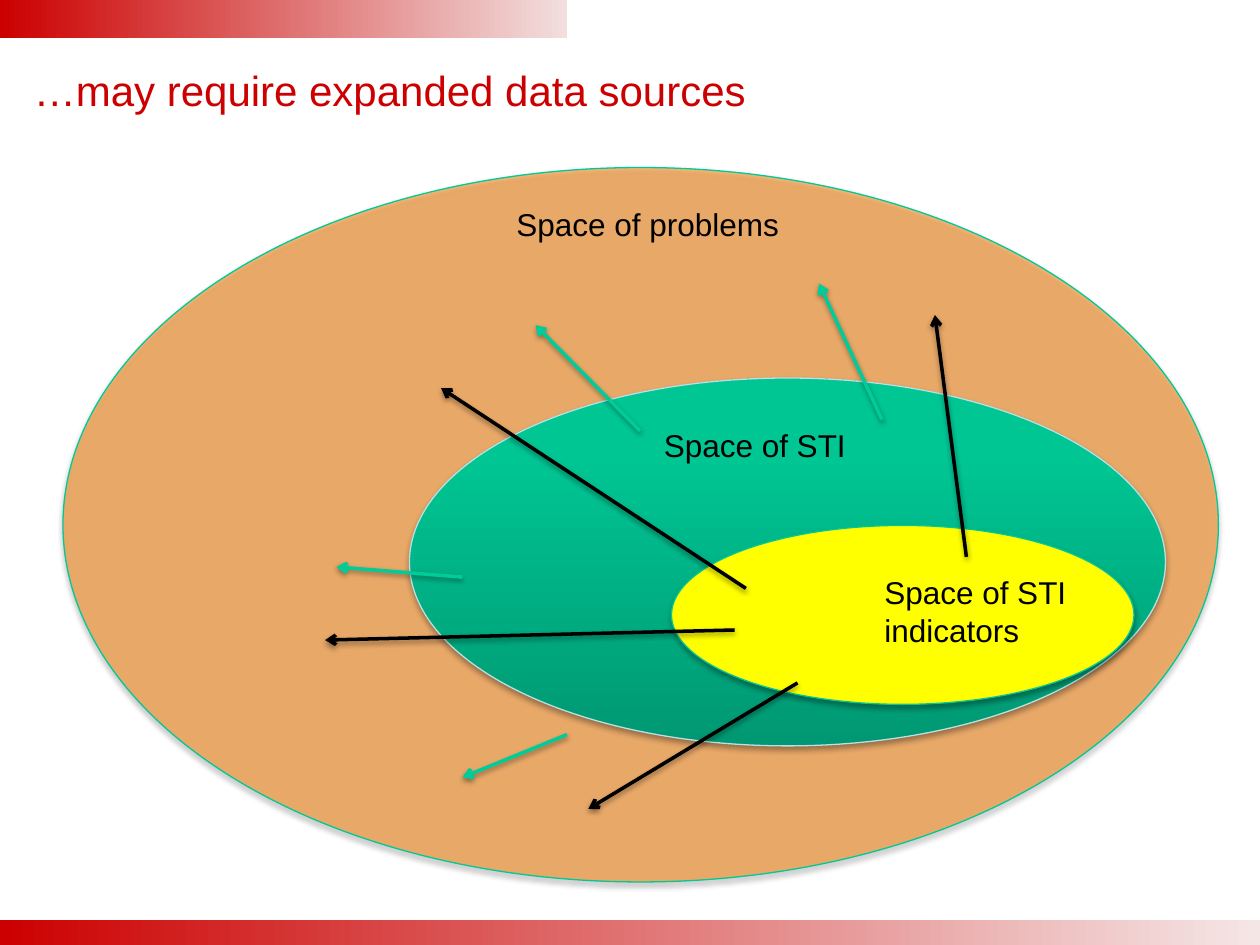
import dataclasses

import lxml.etree
import pptx
import pptx.dml.color
import pptx.enum.shapes
import pptx.enum.text
import pptx.oxml.ns
import pptx.util

Inches = pptx.util.Inches
Pt = pptx.util.Pt
qn = pptx.oxml.ns.qn
SHAPES = pptx.enum.shapes.MSO_SHAPE


@dataclasses.dataclass(frozen=True)
class Theme:
    font: str = "Arial"
    title_size: int = 24
    label_size: int = 18
    red: str = "CC0000"
    footer_fade: str = "F5E6E6"
    header_fade: str = "F2DEDE"
    orange: str = "FF8000"
    yellow: str = "FFFF00"
    black: str = "000000"
    outline: str = "00C896"
    pale_outline: str = "BBE0E3"
    arrow_green: str = "00CC99"
    sti_stops: tuple = ((0, "009872"), (80, "00C694"), (100, "00C795"))
    outline_width: float = 0.75
    arrow_width: float = 2


THEME = Theme()


def rgb(color):
    return pptx.dml.color.RGBColor.from_string(color)


def add_element(parent, tag, **attributes):
    values = {name: str(value) for name, value in attributes.items()}
    return lxml.etree.SubElement(parent, qn(tag), values)


def add_color(parent, color, opacity=None):
    node = add_element(parent, "a:srgbClr", val=color)
    if opacity is not None:
        add_element(node, "a:alpha", val=opacity * 1000)


def fill_gradient(shape, stops, angle):
    shape.fill.gradient()
    shape.fill.gradient_angle = angle
    stop_list = shape.element.spPr.find(".//" + qn("a:gsLst"))
    for old_stop in list(stop_list):
        stop_list.remove(old_stop)
    for position, color in stops:
        add_color(add_element(stop_list, "a:gs", pos=position * 1000), color)


def cast_shadow(shape, opacity, distance):
    effects = add_element(shape.element.spPr, "a:effectLst")
    shadow = add_element(effects, "a:outerShdw", blurRad=Pt(3.1),
                         dist=Pt(distance), dir=90 * 60000, rotWithShape=0)
    add_color(shadow, THEME.black, opacity)


def add_band(slide, box, fade):
    band = slide.shapes.add_shape(SHAPES.RECTANGLE, *map(Inches, box))
    fill_gradient(band, ((0, THEME.red), (100, fade)), 0)
    band.line.fill.background()
    band.shadow.inherit = False


def add_space(slide, box, outline, fill=None, opacity=None, stops=None):
    space = slide.shapes.add_shape(SHAPES.OVAL, *map(Inches, box))
    if stops:
        fill_gradient(space, stops, 90)
    else:
        space.fill.solid()
        space.fill.fore_color.rgb = rgb(fill)
        if opacity is not None:
            color = space.element.spPr.find(qn("a:solidFill"))[0]
            add_element(color, "a:alpha", val=opacity * 1000)
    space.line.color.rgb = rgb(outline)
    space.line.width = Pt(THEME.outline_width)
    cast_shadow(space, 35, 1.8)


def add_text(slide, box, lines, size, color, wrap=False):
    text_box = slide.shapes.add_textbox(*map(Inches, box))
    frame = text_box.text_frame
    frame.word_wrap = wrap
    if wrap:
        frame.vertical_anchor = pptx.enum.text.MSO_ANCHOR.MIDDLE
    else:
        frame.auto_size = pptx.enum.text.MSO_AUTO_SIZE.SHAPE_TO_FIT_TEXT
    frame.text = "\n".join(lines)
    for paragraph in frame.paragraphs:
        paragraph.font.name = THEME.font
        paragraph.font.size = Pt(size)
        paragraph.font.color.rgb = rgb(color)


def add_arrow(slide, start, end, color):
    arrow = slide.shapes.add_connector(
        pptx.enum.shapes.MSO_CONNECTOR.STRAIGHT, *map(Inches, start + end))
    arrow.line.color.rgb = rgb(color)
    arrow.line.width = Pt(THEME.arrow_width)
    add_element(arrow.element.spPr.find(qn("a:ln")), "a:tailEnd", type="arrow")
    cast_shadow(arrow, 38, 1.6)


def add_label(slide, box, *lines):
    add_text(slide, box, lines, THEME.label_size, THEME.black)


def main():
    deck = pptx.Presentation()
    deck.slide_width, deck.slide_height = Inches(10), Inches(7.5)
    slide = deck.slides.add_slide(deck.slide_layouts[6])

    # Bands and title
    add_band(slide, (0, 7.3, 10, 0.2), THEME.footer_fade)
    add_band(slide, (0, 0, 4.5, 0.3), THEME.header_fade)
    add_text(slide, (0.17, 0.25, 9.08, 0.92), ["…may require expanded data sources"],
             THEME.title_size, THEME.red, wrap=True)

    # Nested spaces, from the widest to the narrowest
    add_space(slide, (0.5, 1.33, 9.17, 5.67), THEME.outline, THEME.orange, opacity=50)
    add_label(slide, (4, 1.58, 2.31, 0.4), "Space of problems")
    add_space(slide, (3.25, 3, 6, 2.92), THEME.pale_outline, stops=THEME.sti_stops)
    add_label(slide, (5.17, 3.33, 1.66, 0.4), "Space of STI")
    add_space(slide, (5.33, 4.17, 3.67, 1.42), THEME.outline, THEME.yellow)
    add_label(slide, (6.92, 4.5, 1.66, 0.71), "Space of STI", "indicators")

    # Arrows out of the STI space, then out of the indicators space
    sti_arrows = (
        ((7, 3.33), (6.5, 2.25)),
        ((3.67, 4.58), (2.67, 4.5)),
        ((5.08, 3.42), (4.25, 2.58)),
        ((4.5, 5.83), (3.67, 6.17)),
    )
    indicator_arrows = (
        ((5.83, 5), (2.58, 5.08)),
        ((5.92, 4.67), (3.5, 3.08)),
        ((6.33, 5.42), (4.67, 6.42)),
        ((7.67, 4.42), (7.42, 2.5)),
    )
    for color, arrows in ((THEME.arrow_green, sti_arrows),
                          (THEME.black, indicator_arrows)):
        for start, end in arrows:
            add_arrow(slide, start, end, color)

    deck.save("out.pptx")


if __name__ == "__main__":
    main()
